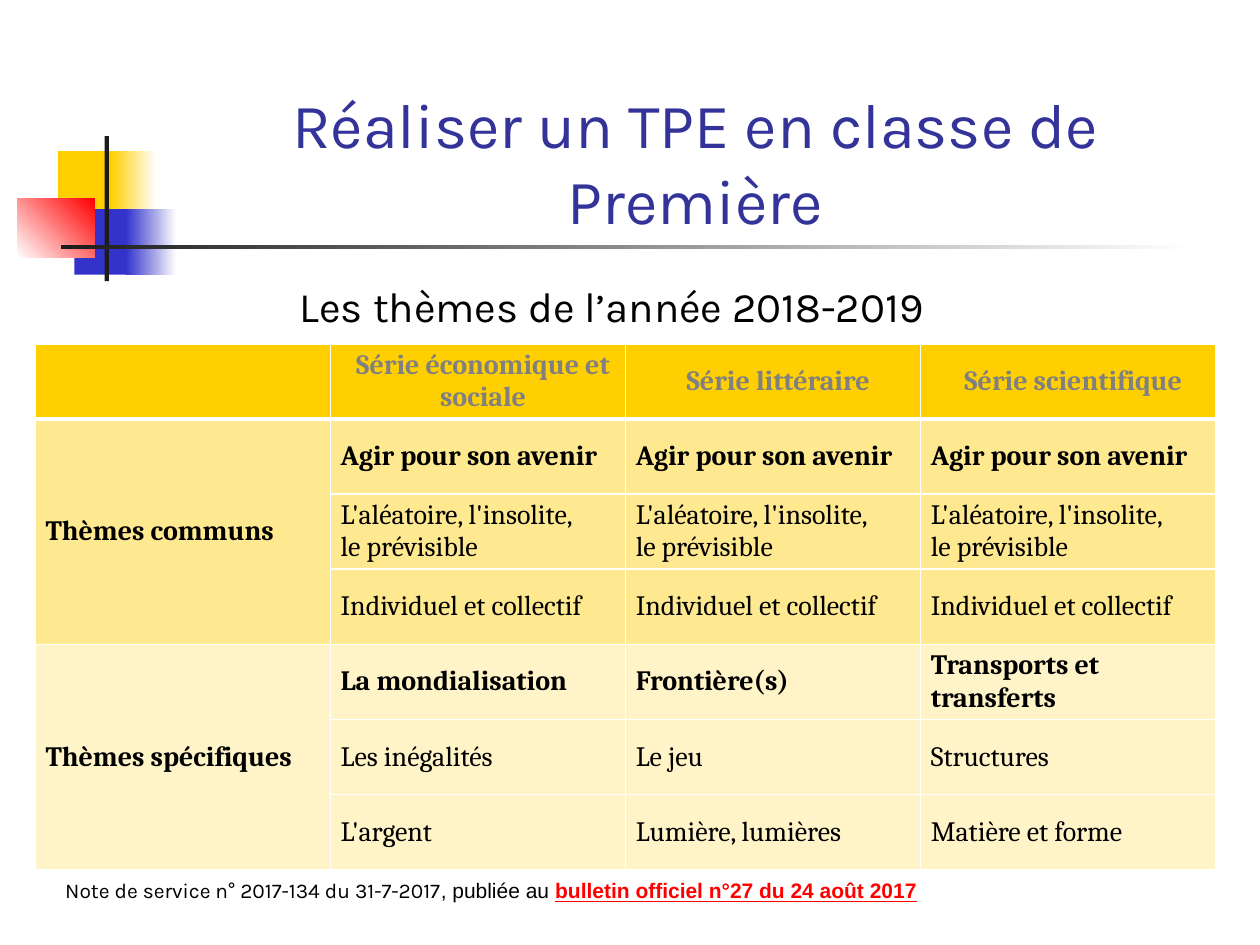
from dataclasses import dataclass
from typing import Optional

from lxml.etree import SubElement
from pptx import Presentation
from pptx.dml.color import RGBColor
from pptx.enum.shapes import MSO_SHAPE
from pptx.enum.text import MSO_ANCHOR, MSO_AUTO_SIZE, PP_ALIGN
from pptx.oxml.ns import qn
from pptx.util import Pt


@dataclass(frozen=True)
class Theme:
    sans: str = "Karla"
    plain: str = "Arial"
    serif: str = "Cambria"
    white: str = "FFFFFF"
    black: str = "000000"
    ink: str = "1C1C1C"
    navy: str = "333399"
    blue: str = "3333CC"
    red: str = "FF0000"
    gold: str = "FFCF01"
    amber: str = "FFE990"
    cream: str = "FFF4C8"
    gray: str = "808080"
    title: float = 36
    head: float = 24
    cell: float = 16
    note: float = 12


@dataclass(frozen=True)
class Box:
    left: float
    top: float
    width: float
    height: float

    def place(self) -> tuple:
        return Pt(self.left), Pt(self.top), Pt(self.width), Pt(self.height)


@dataclass(frozen=True)
class Block:
    box: Box
    color: str
    fade: Optional[str] = None
    angle: float = 0


@dataclass(frozen=True)
class Group:
    name: str
    fill: str
    rows: tuple


THEME = Theme()
BLOCKS = (
    Block(Box(33.1, 86.4, 34.6, 37.4), THEME.gold),
    Block(Box(63.4, 86.4, 25.9, 37.4), THEME.gold, THEME.white),
    Block(Box(42.5, 119.5, 33.1, 37.4), THEME.blue),
    Block(Box(72, 119.5, 28.8, 37.4), THEME.blue, THEME.white),
    Block(Box(9.8, 113.6, 44.4, 33.4), THEME.white, THEME.red, 45),
    Block(Box(59.8, 77.8, 2.4, 82.8), THEME.ink),
    Block(Box(34.8, 140.1, 648, 2.5), THEME.ink, THEME.white),
)
HEADS = ("", "Série économique et sociale", "Série littéraire", "Série scientifique")
GROUPS = (
    Group("Thèmes communs", THEME.amber, (
        ("Agir pour son avenir",) * 3,
        ("L'aléatoire, l'insolite, \nle prévisible",) * 3,
        ("Individuel et collectif",) * 3,
    )),
    Group("Thèmes spécifiques", THEME.cream, (
        ("La mondialisation", "Frontière(s)", "Transports et transferts"),
        ("Les inégalités", "Le jeu", "Structures"),
        ("L'argent", "Lumière, lumières", "Matière et forme"),
    )),
)


def style(font, face: str, size: float, color: str, bold: bool = False) -> None:
    font.name = face
    font.size = Pt(size)
    font.bold = bold
    font.color.rgb = RGBColor.from_string(color)


def draw_block(slide, block: Block) -> None:
    shape = slide.shapes.add_shape(MSO_SHAPE.RECTANGLE, *block.box.place())
    shape.shadow.inherit = False
    shape.line.fill.background()
    if block.fade is None:
        shape.fill.solid()
        shape.fill.fore_color.rgb = RGBColor.from_string(block.color)
        return
    shape.fill.gradient()
    shape.fill.gradient_angle = block.angle
    for stop, color in zip(shape.fill.gradient_stops, (block.color, block.fade)):
        stop.color.rgb = RGBColor.from_string(color)


def add_title(slide, box: Box, text: str) -> None:
    title = slide.shapes.title
    title.left, title.top, title.width, title.height = box.place()
    frame = title.text_frame
    frame.text = text
    frame.auto_size = MSO_AUTO_SIZE.NONE
    frame.vertical_anchor = MSO_ANCHOR.BOTTOM
    para = frame.paragraphs[0]
    para.alignment = PP_ALIGN.CENTER
    style(para.font, THEME.sans, THEME.title, THEME.navy)


def add_label(slide, box: Box):
    frame = slide.shapes.add_textbox(*box.place()).text_frame
    frame.word_wrap = True
    frame.auto_size = MSO_AUTO_SIZE.SHAPE_TO_FIT_TEXT
    return frame.paragraphs[0]


def add_edges(cell, top: float, bottom: float) -> None:
    props = cell._tc.get_or_add_tcPr()
    for side, width in (("L", 1), ("R", 1), ("T", top), ("B", bottom)):
        line = SubElement(props, qn(f"a:ln{side}"), w=str(Pt(width)))
        fill = SubElement(line, qn("a:solidFill"))
        SubElement(fill, qn("a:srgbClr"), val=THEME.white)


def fill_cell(cell, text: str, color: str, bold: bool, row: int) -> None:
    head = row == 0
    add_edges(cell, 3 if row == 1 else 1, 3 if head else 1)
    cell.fill.solid()
    cell.fill.fore_color.rgb = RGBColor.from_string(color)
    cell.margin_left = cell.margin_right = cell.margin_top = cell.margin_bottom = 0
    cell.vertical_anchor = MSO_ANCHOR.MIDDLE
    para = cell.text_frame.paragraphs[0]
    para.text = text
    para.alignment = PP_ALIGN.CENTER if head else PP_ALIGN.LEFT
    para.space_before = para.space_after = Pt(3)
    para._p.get_or_add_pPr().set("marL", str(Pt(5.8)))
    style(para.font, THEME.serif, THEME.cell, THEME.gray if head else THEME.black, bold)


def add_grid(slide, box: Box) -> None:
    count = 1 + sum(len(group.rows) for group in GROUPS)
    table = slide.shapes.add_table(count, len(HEADS), *box.place()).table
    for col in table.columns:
        col.width = Pt(box.width / len(HEADS))
    for line in table.rows:
        line.height = Pt(box.height / count)
    for col, text in enumerate(HEADS):
        fill_cell(table.cell(0, col), text, THEME.gold, True, 0)
    row = 1
    for group in GROUPS:
        first = row
        for items in group.rows:
            lead = row == first
            for col, text in enumerate((group.name if lead else "", *items)):
                fill_cell(table.cell(row, col), text, group.fill, lead, row)
            row += 1
        table.cell(first, 0).merge(table.cell(row - 1, 0))


def main() -> None:
    deck = Presentation()
    deck.slide_width, deck.slide_height = Pt(720), Pt(540)
    slide = deck.slides.add_slide(deck.slide_layouts[5])
    for block in BLOCKS:
        draw_block(slide, block)
    add_title(slide, Box(90.7, 49, 613.4, 90), "Réaliser un TPE en classe de Première")

    head = add_label(slide, Box(70.6, 157, 558, 36))
    head.text = "Les thèmes de l’année 2018-2019"
    head.alignment = PP_ALIGN.CENTER
    style(head.font, THEME.sans, THEME.head, THEME.black)

    note = add_label(slide, Box(30.2, 498.2, 521.3, 21.6))
    for text, face, color, mark in (
        ("Note de service n° 2017-134 du 31-7-2017", THEME.sans, THEME.black, False),
        (", publiée au ", THEME.plain, THEME.black, False),
        ("bulletin officiel n°27 du 24 août 2017", THEME.plain, THEME.red, True),
    ):
        run = note.add_run()
        run.text = text
        style(run.font, face, THEME.note, color, mark)
        run.font.underline = mark

    add_grid(slide, Box(20.2, 196.6, 674.6, 300.3))
    deck.save("out.pptx")


if __name__ == "__main__":
    main()
